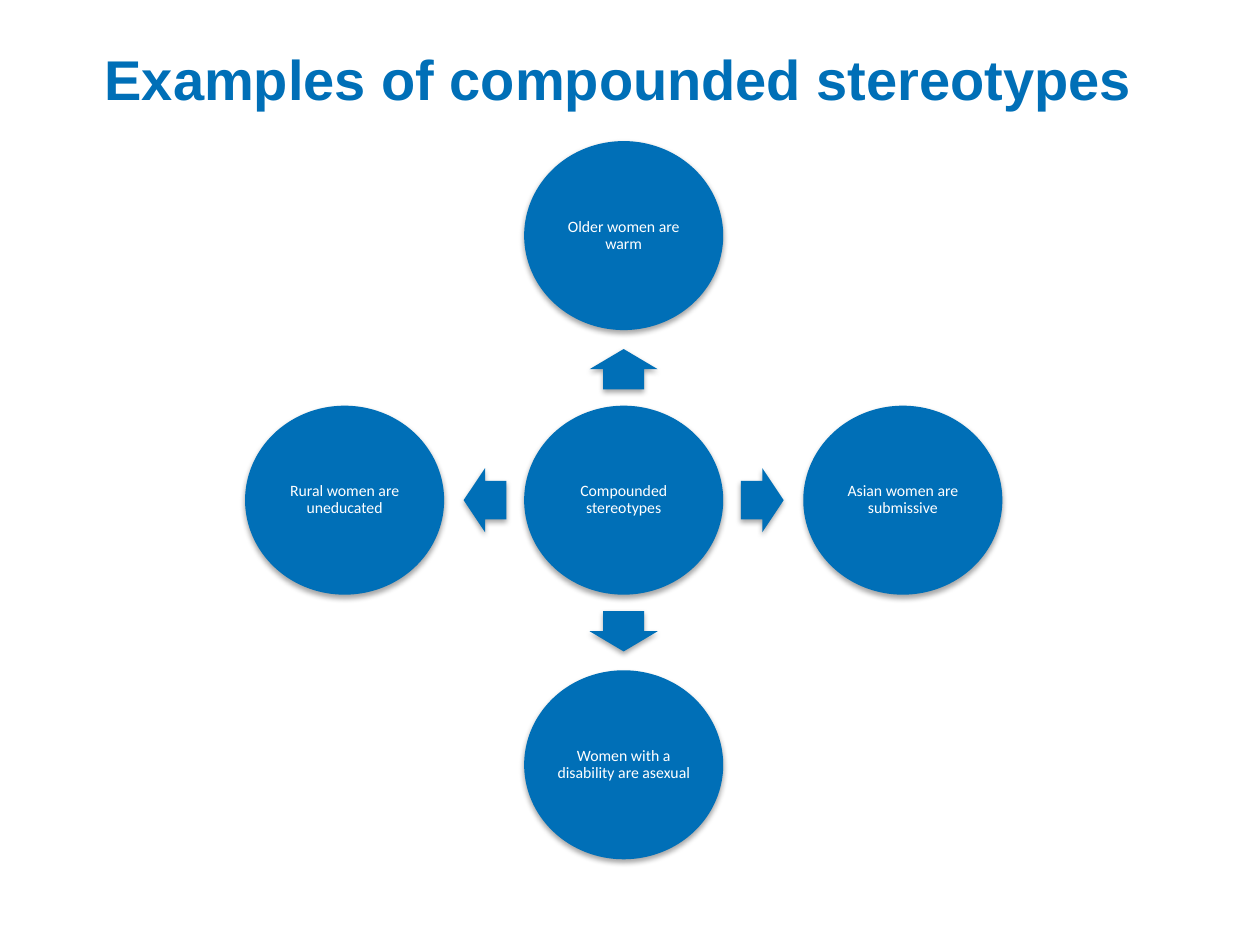
from lxml import etree
from pptx import Presentation
from pptx.dml.color import RGBColor
from pptx.enum import shapes, text
from pptx.oxml import parse_xml
from pptx.oxml.ns import nsdecls
from pptx.util import Inches, Pt

COLORS = {"blue": "006FB7", "white": "FFFFFF", "shadow": "000000"}
CENTER_X, CENTER_Y = 4.95, 3.97
CIRCLE_SIZE = (1.58, 1.5)
CIRCLE_STEP = (2.215, 2.1)
ARROW_STEP = (1.1, 1.04)
SHAPE = shapes.MSO_SHAPE


class StereotypeSlide:
    """Holds the shared style and the slide being drawn."""

    def __init__(self, slide):
        self.slide = slide

    def style_text(self, frame, wording, frame_format, align, font_format, color):
        for name, value in frame_format.items():
            setattr(frame, name, value)
        frame.text = wording
        paragraph = frame.paragraphs[0]
        paragraph.alignment = align
        for name, value in font_format.items():
            setattr(paragraph.font, name, value)
        paragraph.font.color.rgb = RGBColor.from_string(COLORS[color])
        return paragraph

    def title(self, wording, left, top, width, height):
        heading = self.slide.shapes.title
        place = {"left": left, "top": top, "width": width, "height": height}
        for name, value in place.items():
            setattr(heading, name, Inches(value))
        frame_format = {
            "margin_left": Inches(0.02), "margin_right": 0,
            "margin_top": Inches(0.05), "margin_bottom": Inches(0.05),
            "vertical_anchor": text.MSO_ANCHOR.TOP, "word_wrap": True,
            "auto_size": text.MSO_AUTO_SIZE.NONE,
        }
        font_format = {"name": "Arial", "size": Pt(32), "bold": True}
        self.style_text(heading.text_frame, wording, frame_format,
                        text.PP_ALIGN.LEFT, font_format, "blue")

    def blue_shape(self, kind, center_x, center_y, width, height):
        shape = self.slide.shapes.add_shape(
            kind, Inches(center_x - width / 2), Inches(center_y - height / 2),
            Inches(width), Inches(height))
        shape.fill.solid()
        shape.fill.fore_color.rgb = RGBColor.from_string(COLORS["blue"])
        shape.line.fill.background()
        self.soft_shadow(shape)
        return shape

    def soft_shadow(self, shape):
        shape.shadow.inherit = False
        effects = shape._element.spPr.find(
            "{http://schemas.openxmlformats.org/drawingml/2006/main}effectLst")
        effects.append(parse_xml(
            f'<a:outerShdw {nsdecls("a")} blurRad="{Pt(3)}" dist="{Pt(1.8)}" '
            f'dir="5400000" rotWithShape="0"><a:srgbClr val="{COLORS["shadow"]}">'
            '<a:alpha val="35000"/></a:srgbClr></a:outerShdw>'))

    def circle(self, wording, center_x, center_y):
        circle = self.blue_shape(SHAPE.OVAL, center_x, center_y, *CIRCLE_SIZE)
        frame_format = {f"margin_{side}": Inches(0.01)
                        for side in ("left", "right", "top", "bottom")}
        frame_format.update(vertical_anchor=text.MSO_ANCHOR.MIDDLE, word_wrap=True)
        font_format = {"name": "Calibri", "size": Pt(9)}
        label = self.style_text(circle.text_frame, wording, frame_format,
                                text.PP_ALIGN.CENTER, font_format, "white")
        label.line_spacing = 0.9

    def arrow(self, kind, center_x, center_y, width, height):
        arrow = self.blue_shape(kind, center_x, center_y, width, height)
        arrow.adjustments[0] = 0.6
        arrow.adjustments[1] = 0.5


def main():
    deck = Presentation()
    deck.slide_width, deck.slide_height = Inches(10), Inches(7.5)
    page = StereotypeSlide(deck.slides.add_slide(deck.slide_layouts[5]))

    # Title
    page.title("Examples of compounded stereotypes", 0.81, 0.3, 8.27, 1.19)

    # Hub
    page.circle("Compounded stereotypes", CENTER_X, CENTER_Y)

    # Examples around the hub, each with an arrow pointing to it
    examples = [
        ("Older women are warm", SHAPE.UP_ARROW, 0, -1),
        ("Asian women are submissive", SHAPE.RIGHT_ARROW, 1, 0),
        ("Women with a disability are asexual", SHAPE.DOWN_ARROW, 0, 1),
        ("Rural women are uneducated", SHAPE.LEFT_ARROW, -1, 0),
    ]
    for wording, arrow_kind, across, down in examples:
        arrow_size = (0.34, 0.51) if across else (0.54, 0.32)
        page.arrow(arrow_kind, CENTER_X + across * ARROW_STEP[0],
                   CENTER_Y + down * ARROW_STEP[1], *arrow_size)
        page.circle(wording, CENTER_X + across * CIRCLE_STEP[0],
                    CENTER_Y + down * CIRCLE_STEP[1])

    deck.save("out.pptx")


if __name__ == "__main__":
    main()
